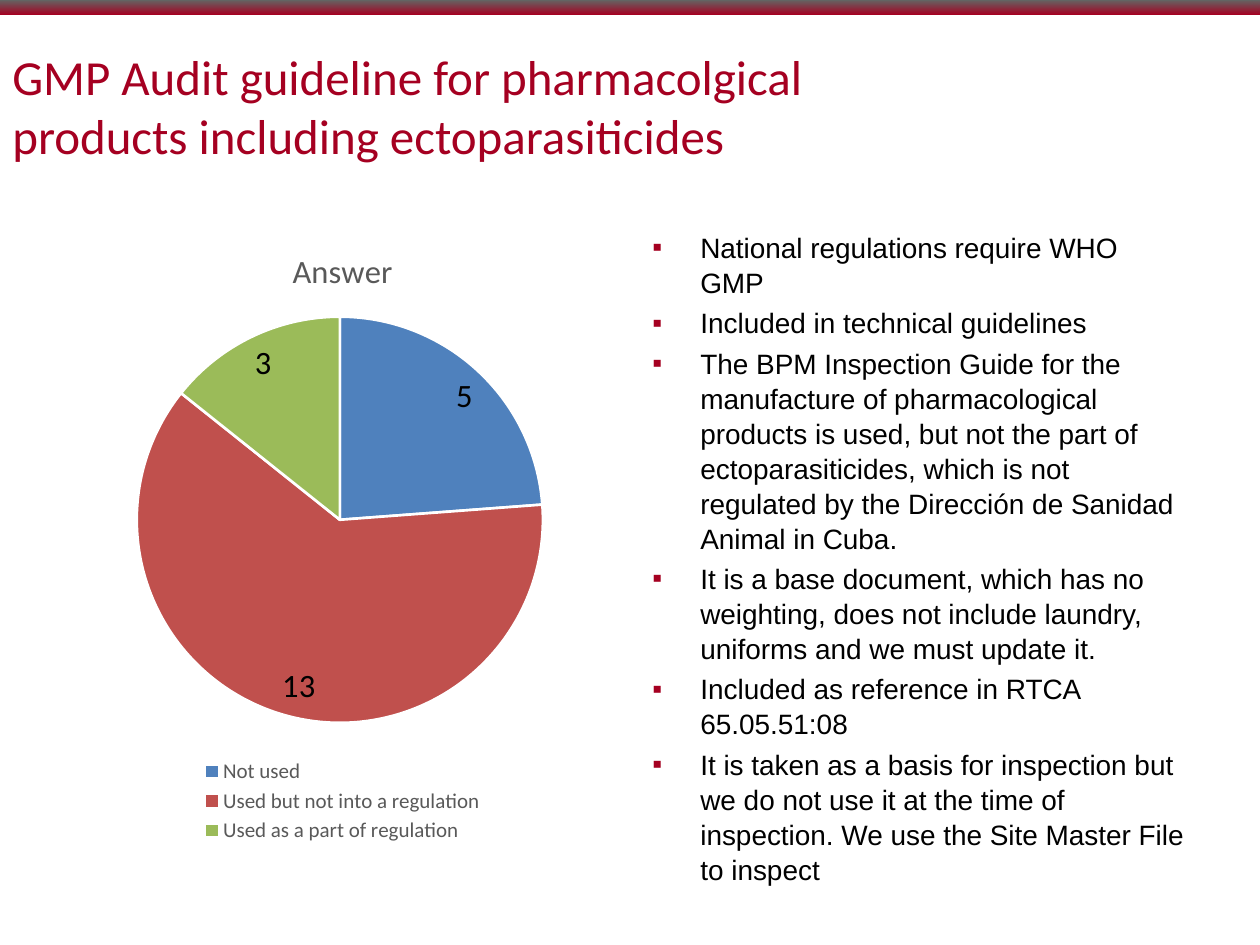
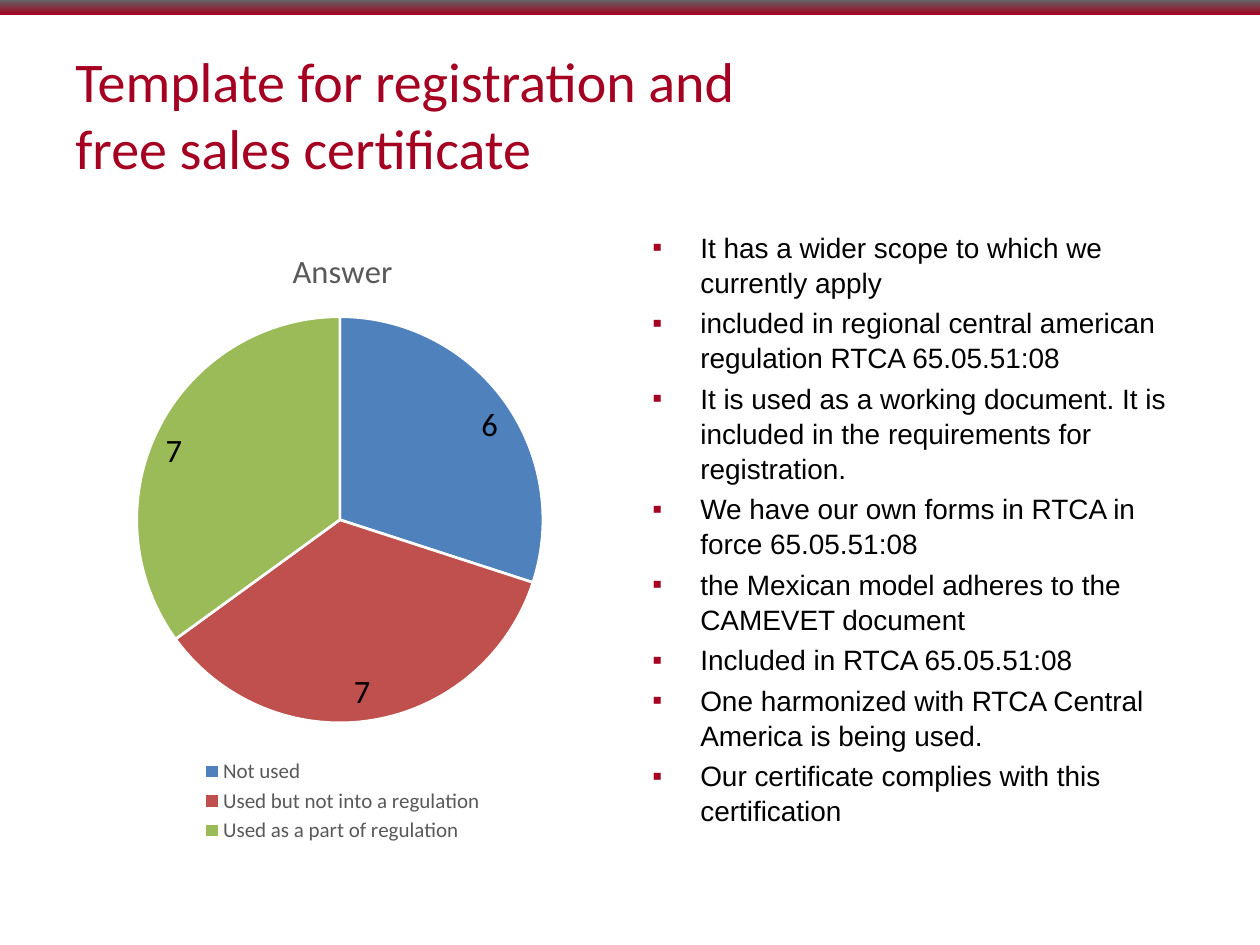
from lxml import etree
from pptx import Presentation
from pptx.chart.data import CategoryChartData
from pptx.dml.color import RGBColor
from pptx.enum import chart as ch, shapes, text
from pptx.oxml import ns
from pptx.util import Inches, Pt

CRIMSON = RGBColor(0xA5, 0x00, 0x21)
SLATE = RGBColor(0x63, 0x64, 0x63)
BLACK = RGBColor(0x00, 0x00, 0x00)
WHITE = RGBColor(0xFF, 0xFF, 0xFF)
GREY = RGBColor(0x59, 0x59, 0x59)
SLICE_COLORS = (RGBColor(0x4F, 0x81, 0xBD), RGBColor(0xC0, 0x50, 0x4D),
                RGBColor(0x9B, 0xBB, 0x59))
HEADING_FONT, BODY_FONT = "Calibri", "Arial"
ANSWERS = ("Not used", "Used but not into a regulation", "Used as a part of regulation")

COLUMN_TOP, COLUMN_WIDTH, COLUMN_HEIGHT = 1.77, 4.42, 4.96
CHART_LEFT, COMMENTS_LEFT = 0.51, 5.08

SURVEY_TOPICS = [
    dict(
        title=("GMP Audit guideline for pharmacolgical", "products including ectoparasiticides"),
        title_left=0, title_size=28, counts=(5, 13, 3),
        comments=(
            "National regulations require WHO GMP",
            "Included in technical guidelines",
            "The BPM Inspection Guide for the manufacture of pharmacological products is used, "
            "but not the part of ectoparasiticides, which is not regulated by the Dirección de "
            "Sanidad Animal in Cuba.",
            "It is a base document, which has no weighting, does not include laundry, uniforms "
            "and we must update it.",
            "Included as reference in RTCA 65.05.51:08",
            "It is taken as a basis for inspection but we do not use it at the time of "
            "inspection. We use the Site Master File to inspect",
        ),
    ),
    dict(
        title=("Template for registration and", "free sales certificate"),
        title_left=0.5, title_size=32, counts=(6, 7, 7),
        comments=(
            "It has a wider scope to which we currently apply",
            "included in regional central american regulation RTCA 65.05.51:08",
            "It is used as a working document. It is included in the requirements for "
            "registration.",
            "We have our own forms in RTCA in force 65.05.51:08",
            "the Mexican model adheres to the CAMEVET document",
            "Included in RTCA 65.05.51:08",
            "One harmonized with RTCA Central America is being used.",
            "Our certificate complies with this certification",
        ),
    ),
]


def style_font(font, name, size, color):
    font.name, font.size, font.bold = name, Pt(size), False
    font.color.rgb = color


def place_in_chart(part, index, x, y, w, h, inner=False):
    """Fix a chart part at fractions of the chart area; index is its layout's place."""
    layout = part.find(ns.qn("c:layout"))
    if layout is None:
        layout = etree.Element(ns.qn("c:layout"))
        part.insert(index, layout)
    manual = etree.SubElement(layout, ns.qn("c:manualLayout"))
    settings = [("layoutTarget", "inner")] if inner else []
    settings += [("xMode", "edge"), ("yMode", "edge"), ("x", x), ("y", y), ("w", w), ("h", h)]
    for tag, value in settings:
        etree.SubElement(manual, ns.qn("c:" + tag)).set("val", str(value))


class SurveyDeck:
    def __init__(self):
        self.prs = Presentation()
        self.prs.slide_width, self.prs.slide_height = Inches(10), Inches(7.5)
        self.slide = None

    def new_slide(self):
        self.slide = self.prs.slides.add_slide(self.prs.slide_layouts[6])
        self.band()

    def band(self):
        band = self.slide.shapes.add_shape(
            shapes.MSO_SHAPE.RECTANGLE, 0, 0, self.prs.slide_width, Inches(0.12))
        band.shadow.inherit = False
        band.line.fill.background()
        band.fill.gradient()
        band.fill.gradient_angle = 90
        for stop, position, color in zip(band.fill.gradient_stops, (0, 1), (CRIMSON, SLATE)):
            stop.position = position
            stop.color.rgb = color

    def text_frame(self, left, top, width, height):
        frame = self.slide.shapes.add_textbox(
            Inches(left), Inches(top), Inches(width), Inches(height)).text_frame
        frame.word_wrap = True
        frame.vertical_anchor = text.MSO_ANCHOR.TOP
        return frame

    def run(self, paragraph, words, name, size, color):
        run = paragraph.add_run()
        run.text = words
        style_font(run.font, name, size, color)

    def title(self, lines, left, size):
        frame = self.text_frame(left, 0.3, 10 - 2 * left, 0.98)
        frame.margin_top = Inches(0.07)
        paragraph = frame.paragraphs[0]
        for number, line in enumerate(lines):
            if number:
                paragraph.add_line_break()
            self.run(paragraph, line, HEADING_FONT, size, CRIMSON)

    def comments(self, remarks):
        frame = self.text_frame(COMMENTS_LEFT, COLUMN_TOP, COLUMN_WIDTH, COLUMN_HEIGHT)
        for number, remark in enumerate(remarks):
            paragraph = frame.add_paragraph() if number else frame.paragraphs[0]
            paragraph.space_before = Pt(3.2)
            paragraph.line_spacing = 1.04
            self.bullet(paragraph)
            self.run(paragraph, remark, BODY_FONT, 16, BLACK)

    def bullet(self, paragraph):
        properties = paragraph._p.get_or_add_pPr()
        properties.set("marL", str(Inches(0.38)))
        properties.set("indent", str(-Inches(0.38)))
        color = etree.SubElement(properties, ns.qn("a:buClr"))
        etree.SubElement(color, ns.qn("a:srgbClr")).set("val", str(CRIMSON))
        etree.SubElement(properties, ns.qn("a:buFont")).set("typeface", BODY_FONT)
        etree.SubElement(properties, ns.qn("a:buChar")).set("char", "▪")

    def answer_pie(self, counts):
        data = CategoryChartData(number_format="General")
        data.categories = ANSWERS
        data.add_series("Answer", counts)
        chart = self.slide.shapes.add_chart(
            ch.XL_CHART_TYPE.PIE, Inches(CHART_LEFT), Inches(COLUMN_TOP),
            Inches(COLUMN_WIDTH), Inches(COLUMN_HEIGHT), data).chart
        style_font(chart.font, HEADING_FONT, 10, BLACK)

        chart.has_title = True
        heading = chart.chart_title.text_frame.paragraphs[0]
        self.run(heading, "Answer", HEADING_FONT, 18.6, GREY)

        chart.has_legend = True
        chart.legend.position = ch.XL_LEGEND_POSITION.BOTTOM
        chart.legend.include_in_layout = False
        style_font(chart.legend.font, HEADING_FONT, 12, GREY)

        plot = chart.plots[0]
        plot.vary_by_categories = True
        plot.has_data_labels = True
        labels = plot.data_labels
        labels.show_value, labels.show_percentage = True, False
        labels.position = ch.XL_LABEL_POSITION.INSIDE_END
        style_font(labels.font, HEADING_FONT, 18.6, BLACK)
        for number, color in enumerate(SLICE_COLORS):
            slice_format = plot.series[0].points[number].format
            slice_format.fill.solid()
            slice_format.fill.fore_color.rgb = color
            slice_format.line.color.rgb = WHITE
            slice_format.line.width = Pt(1.5)

        root = chart.element
        place_in_chart(root.find(".//" + ns.qn("c:plotArea")), 0, 0.13, 0.15, 0.73, 0.65, True)
        place_in_chart(root.find(".//" + ns.qn("c:legend")), 1, 0.24, 0.85, 0.52, 0.15)


def main():
    deck = SurveyDeck()
    for topic in SURVEY_TOPICS:
        deck.new_slide()
        deck.title(topic["title"], topic["title_left"], topic["title_size"])
        deck.comments(topic["comments"])
        deck.answer_pie(topic["counts"])
    deck.prs.save("out.pptx")


if __name__ == "__main__":
    main()
